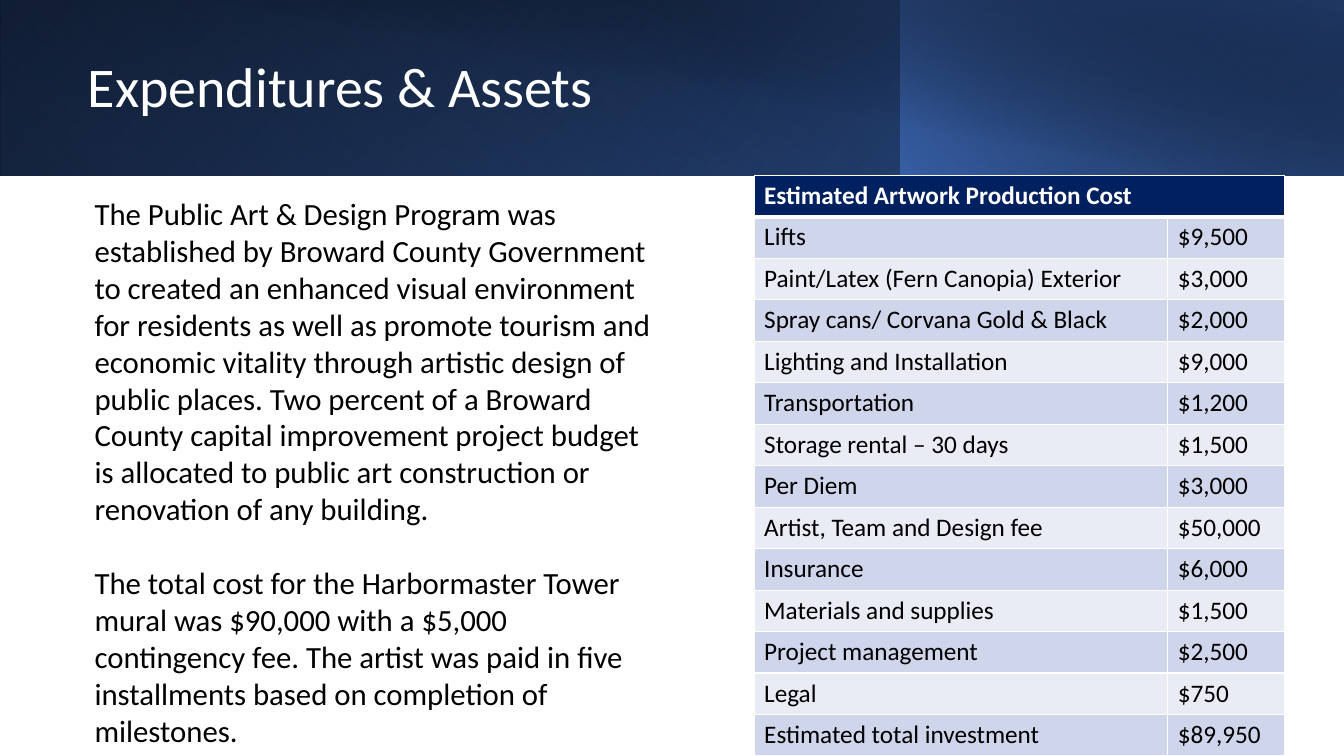
from dataclasses import dataclass

from pptx import Presentation
from pptx.dml.color import RGBColor
from pptx.enum.shapes import MSO_SHAPE
from pptx.enum.text import MSO_ANCHOR, PP_ALIGN
from pptx.oxml import parse_xml
from pptx.oxml.ns import nsdecls
from pptx.util import Inches, Pt

RECTANGLE = MSO_SHAPE.RECTANGLE
MIDDLE = MSO_ANCHOR.MIDDLE
LEFT = PP_ALIGN.LEFT


@dataclass(frozen=True)
class Theme:
    """Colours and type sizes of the deck."""
    font: str = "Calibri"
    white: str = "FFFFFF"
    black: str = "000000"
    blue: str = "4472C4"
    steel: str = "2F5597"
    navy: str = "203864"
    header: str = "002060"
    stripes: tuple = ("CFD5EA", "E9EBF5")
    title_size: int = 40
    body_size: int = 22
    table_size: int = 18


@dataclass(frozen=True)
class Box:
    """A rectangle in hundredths of the slide's width and height."""
    left: float
    top: float
    width: float
    height: float

    def place(self, deck):
        """Return left, top, width and height in slide units."""
        column, row = deck.slide_width / 100, deck.slide_height / 100
        return (int(self.left * column), int(self.top * row),
                int(self.width * column), int(self.height * row))


THEME = Theme()
BAND = Box(0, 0, 100, 23.2)
TITLE = Box(5.78, 4.27, 81.17, 15.07)
BODY = Box(6.3, 25.07, 43.66, 80.27)
COSTS = Box(56.11, 23.2, 39.46, 76.8)
LABEL_SHARE = 0.78

# Each layer: left share, width share, rotation, mirrored, angle, stops.
LAYERS = [
    (0, 1, 0, True, 140, [(0, THEME.black, 100), (100, THEME.steel, 100)]),
    (0, 0.67, 180, True, 230, [(20, THEME.blue, 0), (100, THEME.navy, 55)]),
    (0.67, 0.33, 0, True, 220, [(0, THEME.blue, 66), (100, THEME.black, 30)]),
    (0.04, 0.96, 0, False, 280, [(50, THEME.black, 0), (99, THEME.navy, 52)]),
]
PARAGRAPHS = [
    "The Public Art & Design Program was established by Broward County "
    "Government to created an enhanced visual environment for residents as "
    "well as promote tourism and economic vitality through artistic design "
    "of public places. Two percent of a Broward County capital improvement "
    "project budget is allocated to public art construction or renovation of "
    "any building.",
    "The total cost for the Harbormaster Tower mural was $90,000 with a "
    "$5,000 contingency fee. The artist was paid in five installments based "
    "on completion of milestones.",
]
COST_ROWS = [
    ("Estimated Artwork Production Cost", ""),
    ("Lifts", "$9,500"),
    ("Paint/Latex (Fern Canopia) Exterior", "$3,000"),
    ("Spray cans/ Corvana Gold & Black", "$2,000"),
    ("Lighting and Installation", "$9,000"),
    ("Transportation", "$1,200"),
    ("Storage rental – 30 days", "$1,500"),
    ("Per Diem", "$3,000"),
    ("Artist, Team and Design fee", "$50,000"),
    ("Insurance", "$6,000"),
    ("Materials and supplies", "$1,500"),
    ("Project management", "$2,500"),
    ("Legal", "$750"),
    ("Estimated total investment", "$89,950"),
]


def style_text(para, size, color, bold=False):
    """Format every run of a paragraph."""
    for span in para.runs:
        span.font.name = THEME.font
        span.font.size = Pt(size)
        span.font.bold = bold
        span.font.color.rgb = RGBColor.from_string(color)


def set_gradient(shape, angle, stops):
    """Fill a shape with a linear gradient of (position, colour, opacity) stops."""
    stop_xml = "".join(
        f'<a:gs pos="{position * 1000}"><a:srgbClr val="{color}">'
        f'<a:alpha val="{opacity * 1000}"/></a:srgbClr></a:gs>'
        for position, color, opacity in stops)
    gradient = parse_xml(
        f'<a:gradFill {nsdecls("a")} rotWithShape="1"><a:gsLst>{stop_xml}</a:gsLst>'
        f'<a:lin ang="{angle * 60000}" scaled="0"/></a:gradFill>')
    shape.fill.background()
    properties = shape._element.spPr
    properties.replace(properties.find("{*}noFill"), gradient)


def add_band(deck, page, box):
    """Stack the gradient layers of the title band."""
    for start, share, rotation, mirrored, angle, stops in LAYERS:
        layer = Box(box.left + start * box.width, box.top,
                    share * box.width, box.height)
        shape = page.shapes.add_shape(RECTANGLE, *layer.place(deck))
        shape.shadow.inherit = False
        shape.line.fill.background()
        shape.rotation = rotation
        if mirrored:
            shape._element.spPr.xfrm.set("flipH", "1")
        set_gradient(shape, angle, stops)


def add_title(deck, page, box):
    """Place the title placeholder on top of the band."""
    title = page.shapes.title
    title._element.getparent().append(title._element)
    title.left, title.top, title.width, title.height = box.place(deck)
    title.text_frame.text = "Expenditures & Assets"
    title.text_frame.vertical_anchor = MIDDLE
    para = title.text_frame.paragraphs[0]
    para.alignment = LEFT
    para.line_spacing = 0.9
    style_text(para, THEME.title_size, THEME.white)


def add_body(deck, page, box):
    """Write the programme description."""
    frame = page.shapes.add_textbox(*box.place(deck)).text_frame
    frame.word_wrap = True
    frame.text = "\n".join(PARAGRAPHS)
    for index, para in enumerate(frame.paragraphs):
        if index:
            para.space_before = Pt(THEME.body_size * 1.2)
        style_text(para, THEME.body_size, THEME.black)


def set_borders(cell, top, bottom):
    """Draw white borders around a cell."""
    properties = cell._tc.get_or_add_tcPr()
    sides = (("lnL", 1), ("lnR", 1), ("lnT", top), ("lnB", bottom))
    for index, (side, width) in enumerate(sides):
        properties.insert(index, parse_xml(
            f'<a:{side} {nsdecls("a")} w="{Pt(width)}"><a:solidFill>'
            f'<a:srgbClr val="{THEME.white}"/></a:solidFill></a:{side}>'))


def add_costs(deck, page, box):
    """Build the striped cost table with a merged header."""
    left, top, width, height = box.place(deck)
    table = page.shapes.add_table(
        len(COST_ROWS), 2, left, top, width, height).table
    table.columns[0].width = int(width * LABEL_SHARE)
    table.columns[1].width = width - table.columns[0].width
    for row, values in enumerate(COST_ROWS):
        is_header = row == 0
        fill = THEME.header if is_header else THEME.stripes[(row - 1) % 2]
        color = THEME.white if is_header else THEME.black
        for column, value in enumerate(values):
            cell = table.cell(row, column)
            cell.text_frame.text = value
            style_text(cell.text_frame.paragraphs[0], THEME.table_size,
                       color, is_header)
            cell.fill.solid()
            cell.fill.fore_color.rgb = RGBColor.from_string(fill)
            set_borders(cell, 3 if row == 1 else 1, 3 if is_header else 1)
    table.cell(0, 0).merge(table.cell(0, 1))


def main():
    """Build and save the deck."""
    deck = Presentation()
    deck.slide_width, deck.slide_height = Inches(13.33), Inches(7.5)
    page = deck.slides.add_slide(deck.slide_layouts[5])
    add_band(deck, page, BAND)
    add_title(deck, page, TITLE)
    add_body(deck, page, BODY)
    add_costs(deck, page, COSTS)
    deck.save("out.pptx")


if __name__ == "__main__":
    main()
